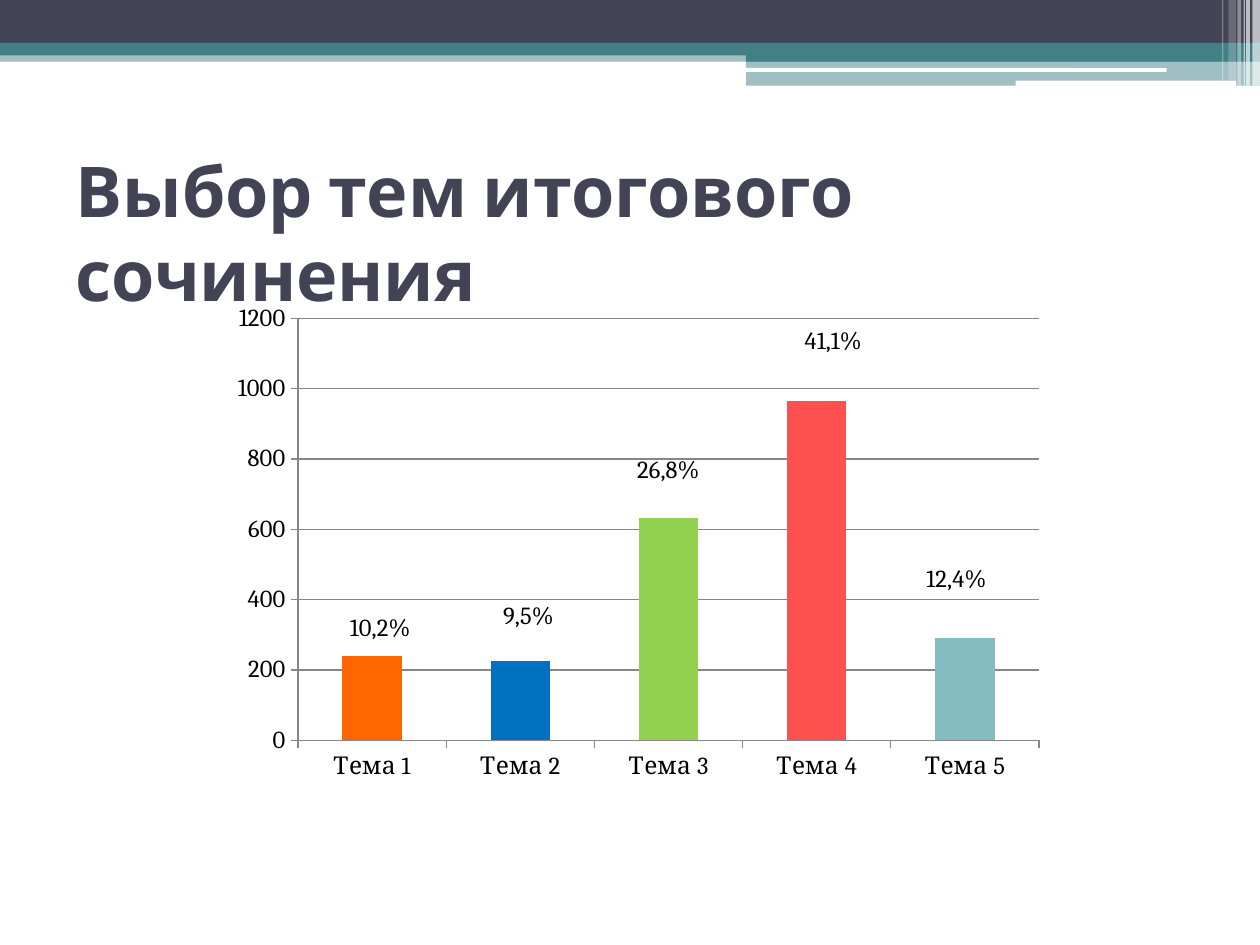
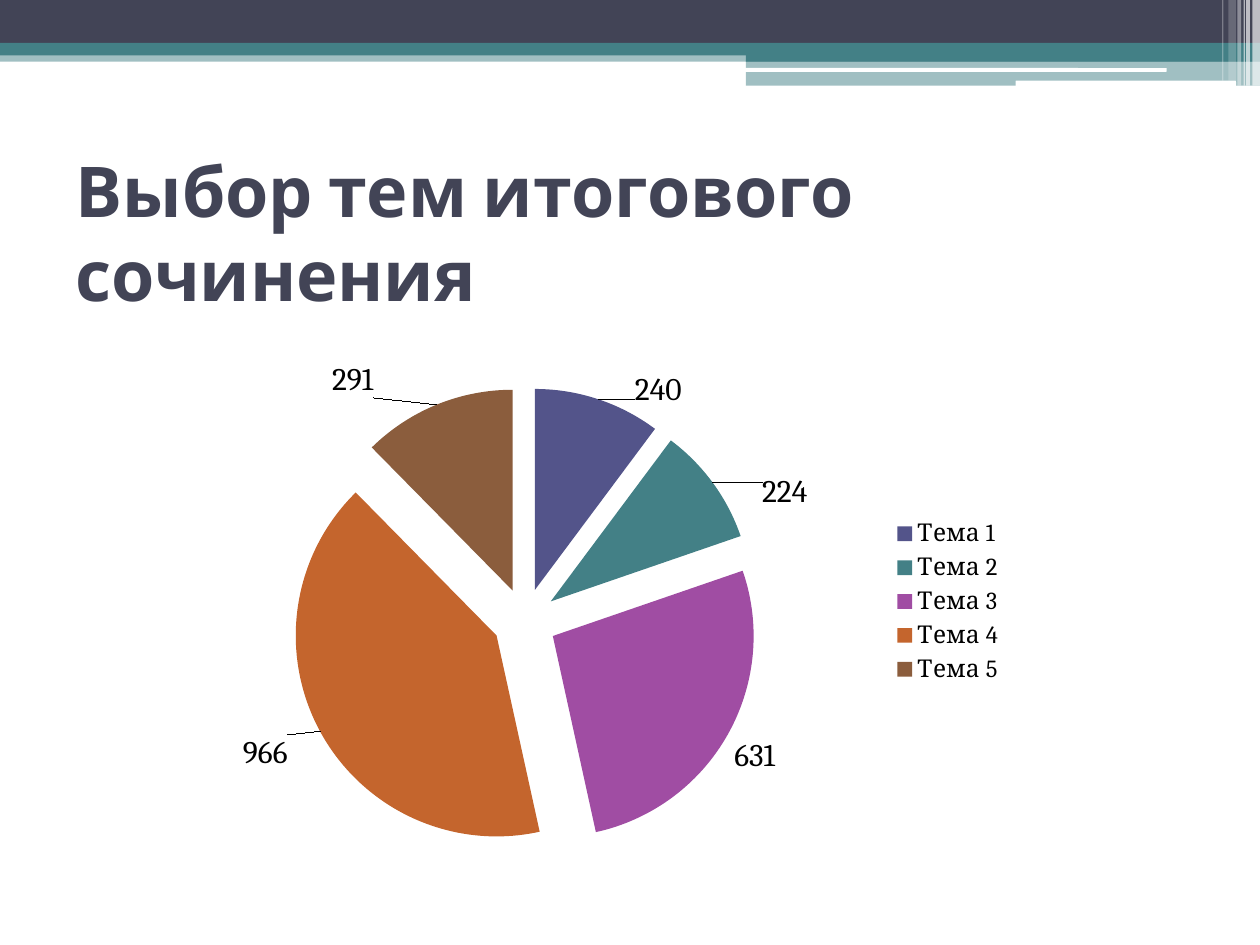
from lxml import etree
from pptx import Presentation
from pptx.chart.data import CategoryChartData
from pptx.dml.color import RGBColor
from pptx.enum.chart import XL_CHART_TYPE as CHART, XL_LABEL_POSITION as LABEL
from pptx.enum.chart import XL_LEGEND_POSITION as LEGEND, XL_TICK_MARK as TICK
from pptx.enum.shapes import MSO_SHAPE as SHAPE
from pptx.enum.text import MSO_ANCHOR, MSO_AUTO_SIZE, PP_ALIGN
from pptx.oxml.ns import qn
from pptx.util import Inches, Pt

W, H = Inches(10), Inches(7.5)
COLORS = {
    "dark": "424456", "teal": "438086", "white": "FFFFFF", "black": "000000",
    "grid": "868686", "orange": "FF6600", "blue": "0070C0", "green": "92D050",
    "red": "FF5050", "aqua": "83BCC1", "indigo": "53548A", "purple": "A04DA3",
    "rust": "C4652D", "brown": "8B5D3D",
}
TITLE_FONT, CHART_FONT = "Cabin", "Cambria"
TITLE = "Выбор тем итогового сочинения"
TOPICS = [f"Тема {n}" for n in range(1, 6)]
VOTES = [240, 224, 631, 966, 291]

# left, top, width, height in percent of the slide; colour; opacity in percent
BANDS = [
    (0, 5.33, 100, 1.2, "teal", 50),
    (0, 0, 100, 4.53, "dark", 100),
    (0, 4.53, 100, 1.33, "teal", 100),
    (59.2, 5.2, 40.8, 1.33, "teal", 100),
    (59.2, 6.4, 40.8, 2.67, "teal", 50),
]
PILLS = [
    (59.1, 7.2, 33.5, 0.4, "white", 100),
    (80.6, 8.53, 17.5, 0.6, "white", 100),
]
# left, width, height, opacity in percent
STRIPES = [
    (99.4, 0.6, 9.07, 65), (98.9, 0.3, 9.07, 65), (98.7, 0.1, 9.07, 60),
    (98.2, 0.3, 9.07, 40), (97.5, 0.6, 8.53, 20), (97, 0.1, 8.53, 30),
]

# colour, label, label offset as shares of the chart's size
COLUMNS = [
    ("orange", "10,2%", 0.01, -0.14), ("blue", "9,5%", 0.01, -0.17),
    ("green", "26,8%", 0, -0.32), ("red", "41,1%", 0.02, -0.46),
    ("aqua", "12,4%", -0.01, -0.22),
]
SLICES = [
    ("indigo", None, 0.04, 0.03), ("teal", None, 0.05, 0.06),
    ("purple", None, 0, 0), ("rust", None, -0.03, 0),
    ("brown", None, -0.07, 0),
]


def rgb(name):
    return RGBColor.from_string(COLORS[name])


def box(left, top, width, height):
    """Turn percent of the slide into lengths."""
    return (int(W * left / 100), int(H * top / 100),
            int(W * width / 100), int(H * height / 100))


def set_font(font, size, color="black", name=CHART_FONT, bold=False):
    font.size, font.name, font.bold = Pt(size), name, bold
    font.color.rgb = rgb(color)


def add_bar(s, kind, left, top, width, height, color, opacity):
    sp = s.shapes.add_shape(kind, *box(left, top, width, height))
    sp.shadow.inherit = False
    sp.line.fill.background()
    sp.fill.solid()
    sp.fill.fore_color.rgb = rgb(color)
    if opacity < 100:
        clr = next(sp._element.spPr.iter(qn("a:srgbClr")))
        etree.SubElement(clr, qn("a:alpha"), val=str(opacity * 1000))


def add_header(s):
    for band in BANDS:
        add_bar(s, SHAPE.RECTANGLE, *band)
    for pill in PILLS:
        add_bar(s, SHAPE.ROUNDED_RECTANGLE, *pill)
    for left, width, height, opacity in STRIPES:
        add_bar(s, SHAPE.RECTANGLE, left, 0, width, height, "white", opacity)


def add_title(s, text):
    sp = s.shapes.title
    sp.left, sp.top, sp.width, sp.height = box(5, 16.67, 90, 15.6)
    tf = sp.text_frame
    tf.text = text
    tf.word_wrap, tf.auto_size = True, MSO_AUTO_SIZE.NONE
    tf.vertical_anchor = MSO_ANCHOR.MIDDLE
    p = tf.paragraphs[0]
    p.alignment = PP_ALIGN.LEFT
    set_font(p.runs[0].font, 40, "dark", TITLE_FONT, True)


def add_slide(prs):
    s = prs.slides.add_slide(prs.slide_layouts[5])
    add_header(s)
    add_title(s, TITLE)
    return s


def make_layout(**values):
    layout = etree.Element(qn("c:layout"))
    manual = etree.SubElement(layout, qn("c:manualLayout"))
    for tag, value in values.items():
        etree.SubElement(manual, qn(f"c:{tag}"), val=str(value))
    return layout


def add_votes_chart(s, kind, place, plot_box):
    """Add a chart of the votes; plot_box holds shares of the chart's size."""
    data = CategoryChartData()
    data.categories = TOPICS
    data.add_series("Series 1", VOTES)
    chart = s.shapes.add_chart(kind, *box(*place), data).chart
    chart.has_title = chart.has_legend = False
    set_font(chart.font, 10)
    area = next(chart._chartSpace.iter(qn("c:plotArea")))
    for old in area.findall(qn("c:layout")):
        area.remove(old)
    x, y, w, h = plot_box
    area.insert(0, make_layout(layoutTarget="inner", xMode="edge", yMode="edge",
                               x=x, y=y, w=w, h=h))
    return chart


def style_points(series, points, size, position, leader_lines):
    labels = series.data_labels
    labels.show_value = True
    set_font(labels.font, size)
    for i, (color, text, dx, dy) in enumerate(points):
        point = series.points[i]
        point.format.fill.solid()
        point.format.fill.fore_color.rgb = rgb(color)
        label = point.data_label
        if text:
            label.text_frame.text = text
            set_font(label.text_frame.paragraphs[0].runs[0].font, size)
        else:
            set_font(label.font, size)
        label.position = position
        idx = labels._element.findall(qn("c:dLbl"))[i].find(qn("c:idx"))
        idx.addnext(make_layout(x=dx, y=dy))
    for leader in labels._element.iter(qn("c:showLeaderLines")):
        leader.set("val", str(int(leader_lines)))


def style_axis(axis):
    set_font(axis.tick_labels.font, 14)
    axis.major_tick_mark, axis.minor_tick_mark = TICK.OUTSIDE, TICK.NONE
    axis.format.line.color.rgb = rgb("grid")


def add_column_chart(s):
    chart = add_votes_chart(s, CHART.COLUMN_STACKED, (17.7, 31.07, 66.1, 52.53),
                            (0.09, 0.05, 0.89, 0.85))
    plot = chart.plots[0]
    plot.gap_width, plot.overlap, plot.vary_by_categories = 150, 100, False
    style_axis(chart.category_axis)
    axis = chart.value_axis
    style_axis(axis)
    axis.minimum_scale, axis.maximum_scale, axis.major_unit = 0, 1200, 200
    axis.has_major_gridlines = True
    axis.major_gridlines.format.line.color.rgb = rgb("grid")
    style_points(plot.series[0], COLUMNS, 14, LABEL.CENTER, leader_lines=False)


def add_pie_chart(s):
    chart = add_votes_chart(s, CHART.PIE, (12.2, 35.33, 68.5, 56.67),
                            (0.16, 0.1, 0.54, 0.87))
    chart.has_legend = True
    chart.legend.position = LEGEND.RIGHT
    chart.legend.include_in_layout = False
    set_font(chart.legend.font, 14)
    plot = chart.plots[0]
    plot.vary_by_categories = True
    series = plot.series[0]
    style_points(series, SLICES, 18, LABEL.OUTSIDE_END, leader_lines=True)
    explosion = etree.Element(qn("c:explosion"), val="16")
    series._element.find(qn("c:dPt")).addprevious(explosion)


def main():
    prs = Presentation()
    prs.slide_width, prs.slide_height = W, H
    add_column_chart(add_slide(prs))
    add_pie_chart(add_slide(prs))
    prs.save("out.pptx")


if __name__ == "__main__":
    main()
